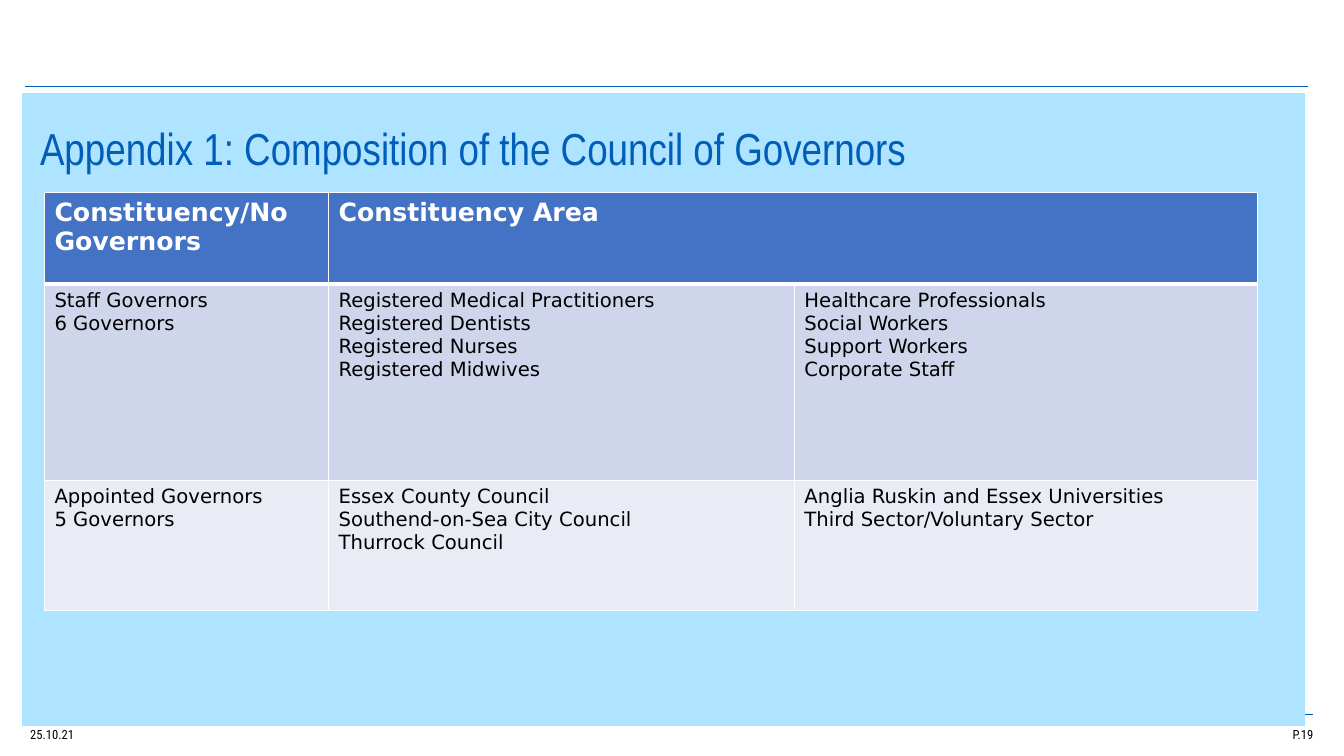
from lxml.etree import SubElement
from pptx import Presentation
from pptx.dml.color import RGBColor
from pptx.enum.shapes import MSO_CONNECTOR, MSO_SHAPE
from pptx.enum.text import MSO_ANCHOR as Anchor, PP_ALIGN as Align
from pptx.oxml.ns import qn
from pptx.util import Cm, Pt

COLORS = {
    "blue": "005EB8", "panel": "AEE4FF", "header": "4472C4",
    "staff": "CFD5EA", "appointed": "E9EBF5", "white": "FFFFFF", "black": "000000",
}
COLUMN_WIDTHS = [7.16, 11.74, 11.66]
ROW_HEIGHTS = [2.29, 4.95, 3.28]
ROW_FILLS = ["header", "staff", "appointed"]
ROWS = [
    [["Constituency/No Governors"], ["Constituency Area"], []],
    [["Staff Governors", "6 Governors"],
     ["Registered Medical Practitioners", "Registered Dentists",
      "Registered Nurses", "Registered Midwives"],
     ["Healthcare Professionals", "Social Workers", "Support Workers", "Corporate Staff"]],
    [["Appointed Governors", "5 Governors"],
     ["Essex County Council", "Southend-on-Sea City Council", "Thurrock Council"],
     ["Anglia Ruskin and Essex Universities", "Third Sector/Voluntary Sector"]],
]


def rgb(name):
    return RGBColor.from_string(COLORS[name])


def write(frame, lines, size, font, color="black", bold=False, align=Align.LEFT, spacing=None):
    """Fill a text frame with one paragraph per line."""
    frame.word_wrap = True
    for index, line in enumerate(lines):
        paragraph = frame.paragraphs[0] if index == 0 else frame.add_paragraph()
        paragraph.alignment = align
        paragraph.line_spacing = spacing
        run = paragraph.add_run()
        run.text = line
        run.font.size = Pt(size)
        run.font.name = font
        run.font.bold = bold
        run.font.color.rgb = rgb(color)


def add_rule(slide, left, right, top):
    line = slide.shapes.add_connector(
        MSO_CONNECTOR.STRAIGHT, Cm(left), Cm(top), Cm(right), Cm(top))
    line.line.color.rgb = rgb("blue")
    line.line.width = Pt(1)
    SubElement(line._element.spPr, qn("a:effectLst"))


def add_panel(slide, left, top, width, height):
    panel = slide.shapes.add_shape(
        MSO_SHAPE.RECTANGLE, Cm(left), Cm(top), Cm(width), Cm(height))
    panel.shadow.inherit = False
    panel.fill.solid()
    panel.fill.fore_color.rgb = rgb("panel")
    panel.line.fill.background()


def add_text(slide, text, left, top, width, height, **text_format):
    box = slide.shapes.add_textbox(Cm(left), Cm(top), Cm(width), Cm(height))
    write(box.text_frame, [text], **text_format)
    return box.text_frame


def add_footer(slide, text, left, align):
    frame = add_text(slide, text, left, 18.29, 3.45, 0.53, size=9,
                     font="Roboto Condensed", align=align, spacing=0.7)
    frame.margin_left = frame.margin_right = 0
    frame.vertical_anchor = Anchor.MIDDLE


def set_borders(cell, top, bottom):
    """Draw white borders; top and bottom are widths in points."""
    properties = cell._tc.get_or_add_tcPr()
    for side, width in (("L", 1), ("R", 1), ("T", top), ("B", bottom)):
        border = SubElement(properties, qn(f"a:ln{side}"), w=str(Pt(width)))
        fill = SubElement(border, qn("a:solidFill"))
        SubElement(fill, qn("a:srgbClr"), val=COLORS["white"])


def add_governor_table(slide, left, top):
    table = slide.shapes.add_table(
        len(ROWS), len(COLUMN_WIDTHS), Cm(left), Cm(top),
        Cm(sum(COLUMN_WIDTHS)), Cm(sum(ROW_HEIGHTS))).table
    for column, width in zip(table.columns, COLUMN_WIDTHS):
        column.width = Cm(width)
    for row, height in zip(table.rows, ROW_HEIGHTS):
        row.height = Cm(height)
    table.cell(0, 1).merge(table.cell(0, 2))
    for row_index, row in enumerate(ROWS):
        is_header = row_index == 0
        for column_index, lines in enumerate(row):
            cell = table.cell(row_index, column_index)
            set_borders(cell, top=3 if row_index == 1 else 1, bottom=3 if is_header else 1)
            cell.fill.solid()
            cell.fill.fore_color.rgb = rgb(ROW_FILLS[row_index])
            write(cell.text_frame, lines, size=18 if is_header else 14, font="DejaVu Sans",
                  color="white" if is_header else "black", bold=is_header)


def main():
    presentation = Presentation()
    presentation.slide_width, presentation.slide_height = Cm(33.87), Cm(19.05)
    slide = presentation.slides.add_slide(presentation.slide_layouts[6])
    add_rule(slide, 0.64, 32.97, 2.18)
    add_rule(slide, 0.76, 33.1, 18.01)
    add_footer(slide, "25.10.21", 0.76, Align.LEFT)
    add_footer(slide, "P.19", 29.65, Align.RIGHT)
    add_panel(slide, 0.56, 2.35, 32.33, 15.95)
    add_governor_table(slide, 1.12, 4.86)
    add_text(slide, "Appendix 1: Composition of the Council of Governors",
             0.76, 2.92, 31.27, 1.63, size=32, font="Arial Narrow", color="blue")
    presentation.save("out.pptx")


if __name__ == "__main__":
    main()
